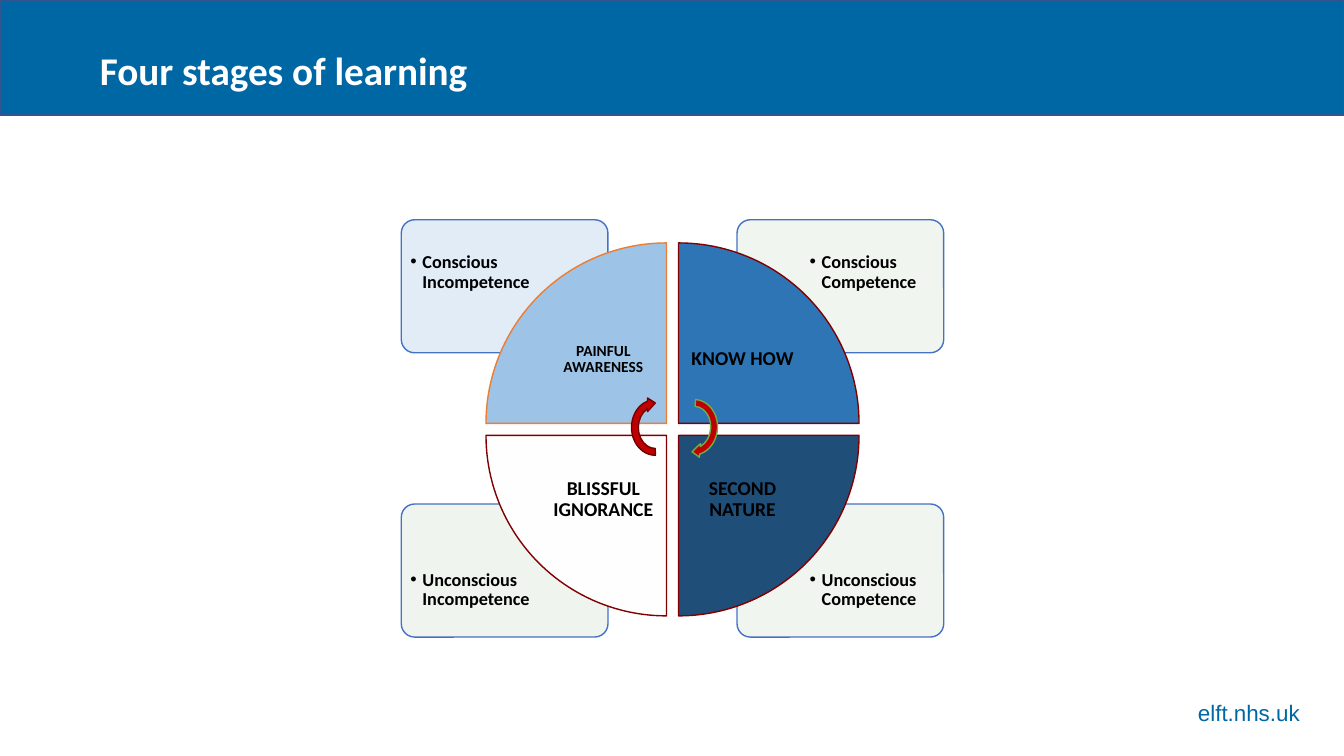
from lxml.etree import SubElement
from pptx import Presentation
from pptx.dml.color import RGBColor
from pptx.enum.shapes import MSO_SHAPE
from pptx.enum.text import MSO_ANCHOR, MSO_AUTO_SIZE, PP_ALIGN
from pptx.oxml.ns import qn
from pptx.util import Inches, Pt

BRAND_BLUE = "0067A5"
WHITE = "FFFFFF"
BLACK = "000000"
PALE_GREEN = "EFF4EF"
MAROON = "800000"


def color(hex_string):
    return RGBColor.from_string(hex_string)


class SlideBuilder:
    """Holds the text style and the slide, and adds each kind of element."""

    font_name = "Calibri"

    def __init__(self, slide):
        self.slide = slide

    def shape(self, kind, box, fill, line, rotation=0, opacity=100):
        shape = self.slide.shapes.add_shape(kind, *map(Inches, box))
        shape.shadow.inherit = False
        shape.rotation = rotation
        shape.fill.solid()
        shape.fill.fore_color.rgb = color(fill)
        shape.line.color.rgb = color(line)
        shape.line.width = Pt(1)
        if opacity < 100:
            fill_color = shape._element.spPr.find(qn("a:solidFill"))[0]
            SubElement(fill_color, qn("a:alpha"), val=str(opacity * 1000))
        return shape

    def add_text(self, frame, text, size, text_color, bold=True, font_name=None):
        frame.word_wrap = True
        frame.auto_size = MSO_AUTO_SIZE.NONE
        paragraph = frame.paragraphs[0]
        run = paragraph.add_run()
        run.text = text
        run.font.name = font_name or self.font_name
        run.font.size = Pt(size)
        run.font.bold = bold
        run.font.color.rgb = color(text_color)
        return paragraph

    def text_frame(self, box, margin, top_margin=None):
        frame = self.slide.shapes.add_textbox(*map(Inches, box)).text_frame
        frame.margin_left = frame.margin_right = frame.margin_bottom = Inches(margin)
        frame.margin_top = Inches(margin if top_margin is None else top_margin)
        return frame

    def title(self, text, box, size):
        title = self.slide.shapes.title
        title.left, title.top, title.width, title.height = map(Inches, box)
        title.text_frame.vertical_anchor = MSO_ANCHOR.TOP
        paragraph = self.add_text(title.text_frame, text, size, WHITE)
        paragraph.alignment = PP_ALIGN.LEFT
        paragraph.line_spacing = 1.0
        # Bring the title in front of the banner
        self.slide.shapes._spTree.append(title._element)

    def footer(self, text, box):
        frame = self.text_frame(box, 0.1, 0.05)
        paragraph = self.add_text(frame, text, 16, BRAND_BLUE, False, "Arial")
        paragraph.alignment = PP_ALIGN.RIGHT

    def bullet(self, text, box):
        frame = self.text_frame(box, 0.07, 0.3)
        paragraph = self.add_text(frame, text, 13, BLACK)
        paragraph.line_spacing = 0.9
        properties = paragraph._p.get_or_add_pPr()
        properties.set("marL", str(Inches(0.12)))
        properties.set("indent", str(-Inches(0.12)))
        SubElement(properties, qn("a:buFont"), typeface="Arial")
        SubElement(properties, qn("a:buChar"), char="•")

    def label(self, text, box, size):
        frame = self.text_frame(box, 0.1)
        frame.vertical_anchor = MSO_ANCHOR.MIDDLE
        paragraph = self.add_text(frame, text, size, BLACK)
        paragraph.alignment = PP_ALIGN.CENTER
        paragraph.line_spacing = 0.9


# column, row, card text, card fill, opacity, wedge label, size, wedge fill, line, rotation
STAGES = [
    (1, 1, "Unconscious Competence", PALE_GREEN, 90,
     "SECOND NATURE", 14, "1F4E79", MAROON, 180),
    (0, 1, "Unconscious Incompetence", PALE_GREEN, 100,
     "BLISSFUL IGNORANCE", 14, "FEFEFF", MAROON, 270),
    (1, 0, "Conscious Competence", PALE_GREEN, 90,
     "KNOW HOW", 14, "2E75B6", MAROON, 90),
    (0, 0, "Conscious Incompetence", "DEEBF7", 90,
     "PAINFUL AWARENESS", 11, "9DC3E6", "ED7D31", 0),
]
CARD_LEFT, CARD_TOP = (3.98, 7.31), (2.18, 5)
CARD_TEXT_LEFT, CARD_TEXT_TOP = (4, 7.96), (2.21, 5.36)
WEDGE_LEFT, WEDGE_TOP = (4.82, 6.73), (2.41, 4.32)
LABEL_LEFT, LABEL_TOP = (5.35, 6.73), (2.93, 4.32)
WEDGE_SIZE, LABEL_SIZE = 1.79, 1.27


def main():
    presentation = Presentation()
    presentation.slide_width = Inches(13.33)
    presentation.slide_height = Inches(7.5)
    slide = presentation.slides.add_slide(presentation.slide_layouts[5])
    builder = SlideBuilder(slide)

    # Banner, title and footer
    builder.footer("elft.nhs.uk", (11.17, 6.89, 1.82, 0.37))
    builder.shape(MSO_SHAPE.RECTANGLE, (0, 0, 13.33, 1.14), BRAND_BLUE, "325491")
    builder.title("Four stages of learning", (0.89, 0.41, 5.32, 0.7), 28)

    # Corner cards
    for column, row, text, fill, opacity, *_ in STAGES:
        card = builder.shape(
            MSO_SHAPE.ROUNDED_RECTANGLE,
            (CARD_LEFT[column], CARD_TOP[row], 2.05, 1.32),
            fill, "4472C4", opacity=opacity)
        card.adjustments[0] = 0.1
        builder.bullet(text, (CARD_TEXT_LEFT[column], CARD_TEXT_TOP[row], 1.37, 0.94))

    # Wedges of the circle
    for column, row, *_, label, size, fill, line, rotation in STAGES:
        builder.shape(
            MSO_SHAPE.PIE_WEDGE,
            (WEDGE_LEFT[column], WEDGE_TOP[row], WEDGE_SIZE, WEDGE_SIZE),
            fill, line, rotation)
        builder.label(
            label, (LABEL_LEFT[column], LABEL_TOP[row], LABEL_SIZE, LABEL_SIZE), size)

    # Arrows at the centre
    for left, line, rotation in ((6.57, "70AD47", 93.9), (6.19, "730000", 270)):
        builder.shape(
            MSO_SHAPE.CIRCULAR_ARROW, (left, 3.97, 0.62, 0.54), "C00000", line, rotation)

    presentation.save("out.pptx")


if __name__ == "__main__":
    main()
